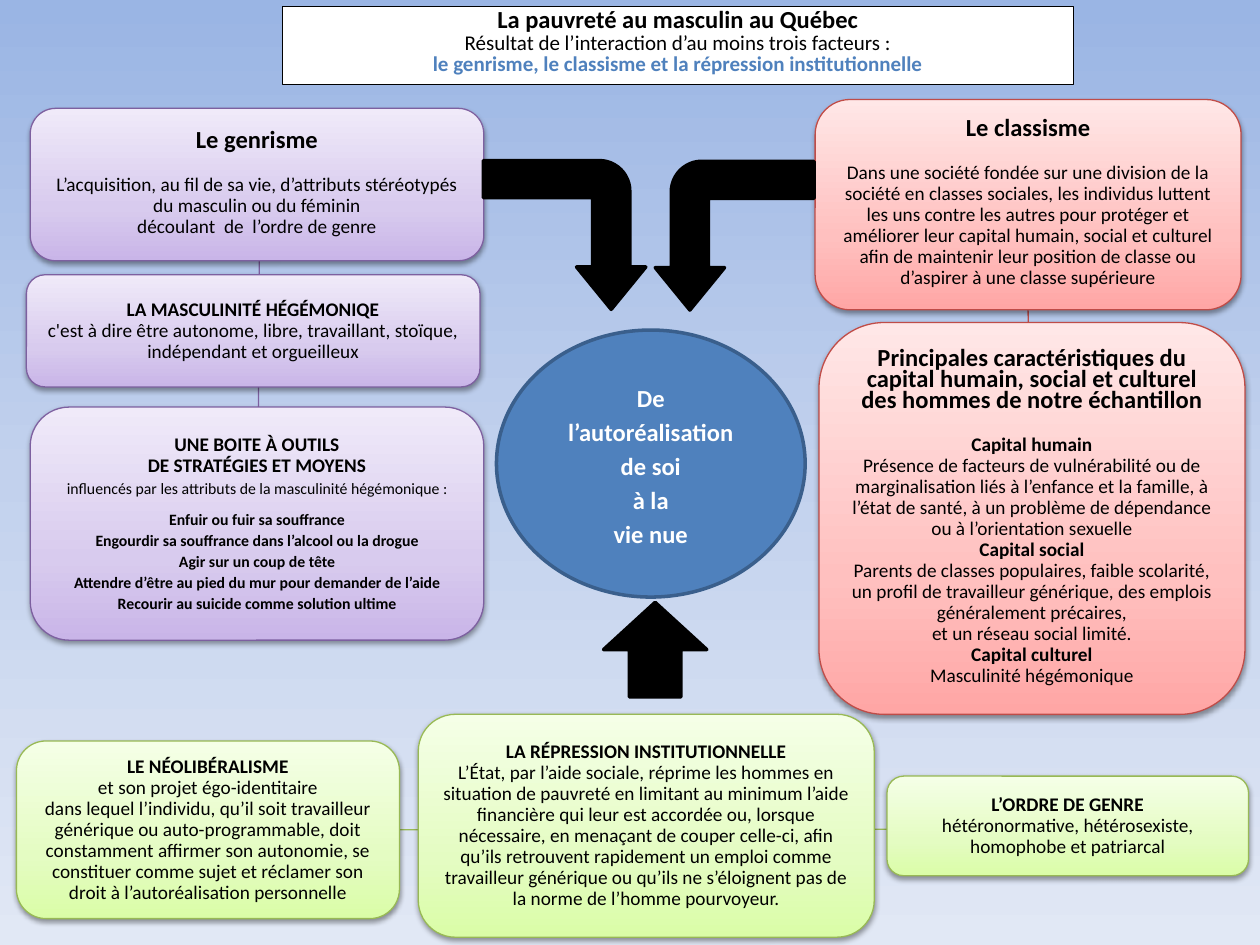
from lxml import etree
from pptx import Presentation
from pptx.dml.color import RGBColor
from pptx.enum.shapes import MSO_CONNECTOR, MSO_SHAPE
from pptx.enum.text import MSO_ANCHOR, PP_ALIGN
from pptx.oxml import parse_xml
from pptx.oxml.ns import nsdecls, qn
from pptx.util import Pt

RECT, ROUND, OVAL = MSO_SHAPE.RECTANGLE, MSO_SHAPE.ROUNDED_RECTANGLE, MSO_SHAPE.OVAL
UP, BENT = MSO_SHAPE.UP_ARROW, MSO_SHAPE.BENT_ARROW
STRAIGHT = MSO_CONNECTOR.STRAIGHT
CENTER, TOP, MIDDLE = PP_ALIGN.CENTER, MSO_ANCHOR.TOP, MSO_ANCHOR.MIDDLE

THEME = {
    "font": "Calibri", "black": "000000", "white": "FFFFFF",
    "blue": "4F81BD", "navy": "3A5F8C",
    "sky": [(0, "9AB5E4"), (50, "C2D1ED"), (100, "E1E8F5")],
    "violet": ("7D60A0", [(0, "C9B5E8"), (35, "D8CBEE"), (100, "F0EAF9")]),
    "red": ("BF4C48", [(0, "FFA6A5"), (35, "FFC0BF"), (100, "FFE7E7")]),
    "green": ("98B955", [(0, "DAFDA7"), (35, "E4FCC2"), (100, "F5FFE7")]),
    # style: size, bold
    "head": (14, True), "lead": (12, False), "key": (12, True),
    "bold": (11, True), "body": (11, False),
    "small": (9, False), "item": (9, True),
}

# Each paragraph: style, text, optional space before
TITLE = [
    ("head", "La pauvreté au masculin au Québec"),
    ("lead", "Résultat de l’interaction d’au moins trois facteurs :"),
    ("key", "le genrisme, le classisme et la répression institutionnelle"),
]
CORE = [("head", t) for t in ("De l’autoréalisation", "de soi", "à la", "vie nue")]

# name: colour, (left, top, width, height), paragraphs
BOXES = {
    "genre": ("violet", (17.3, 61.9, 259.2, 87.1), [
        ("head", "Le genrisme"),
        ("body", "L’acquisition, au fil de sa vie, d’attributs stéréotypés du masculin ou du féminin", 12),
        ("body", "découlant  de  l’ordre de genre"),
    ]),
    "norm": ("violet", (15.1, 157, 259.2, 64.1), [
        ("bold", "LA MASCULINITÉ HÉGÉMONIQE"),
        ("body", "c'est à dire être autonome, libre, travaillant, stoïque, indépendant et orgueilleux"),
    ]),
    "tools": ("violet", (17.3, 232.6, 259.2, 133.2), [
        ("bold", "UNE BOITE À OUTILS"),
        ("bold", "DE STRATÉGIES ET MOYENS"),
        ("small", "influencés par les attributs de la masculinité hégémonique :"),
        ("item", "Enfuir ou fuir sa souffrance", 6),
        ("item", "Engourdir sa souffrance dans l’alcool ou la drogue"),
        ("item", "Agir sur un coup de tête"),
        ("item", "Attendre d’être au pied du mur pour demander de l’aide"),
        ("item", "Recourir au suicide comme solution ultime"),
    ]),
    "class": ("red", (465.8, 56.9, 243.4, 120.2), [
        ("head", "Le classisme"),
        ("body", "Dans une société fondée sur une division de la société en classes sociales, "
                 "les individus luttent les uns contre les autres pour protéger et améliorer "
                 "leur capital humain, social et culturel", 12),
        ("body", "afin de maintenir leur position de classe ou d’aspirer à une classe supérieure"),
    ]),
    "capital": ("red", (468, 184.3, 243.4, 223.9), [
        ("head", "Principales caractéristiques du capital humain, social et culturel "
                 "des hommes de notre échantillon"),
        ("bold", "Capital humain", 12),
        ("body", "Présence de facteurs de vulnérabilité ou de marginalisation liés à l’enfance "
                 "et la famille, à l’état de santé, à un problème de dépendance ou à "
                 "l’orientation sexuelle"),
        ("bold", "Capital social"),
        ("body", "Parents de classes populaires, faible scolarité,"),
        ("body", "un profil de travailleur générique, des emplois généralement précaires,"),
        ("body", "et un réseau social limité."),
        ("bold", "Capital culturel"),
        ("body", "Masculinité hégémonique"),
    ]),
    "state": ("green", (239, 408.2, 260.6, 127.4), [
        ("bold", "LA RÉPRESSION INSTITUTIONNELLE"),
        ("body", "L’État, par l’aide sociale, réprime les hommes en situation de pauvreté en "
                 "limitant au minimum l’aide financière qui leur est accordée ou, lorsque "
                 "nécessaire, en menaçant de couper celle-ci, afin qu’ils retrouvent rapidement "
                 "un emploi comme travailleur générique ou qu’ils ne s’éloignent pas de la norme "
                 "de l’homme pourvoyeur."),
    ]),
    "market": ("green", (9.4, 423.4, 218.9, 101.5), [
        ("bold", "LE NÉOLIBÉRALISME"),
        ("body", "et son projet égo-identitaire"),
        ("body", "dans lequel l’individu, qu’il soit travailleur générique ou auto-programmable, "
                 "doit constamment affirmer son autonomie, se constituer comme sujet et réclamer "
                 "son droit à l’autoréalisation personnelle"),
    ]),
    "order": ("green", (506.9, 443.5, 206.6, 56.9), [
        ("bold", "L’ORDRE DE GENRE"),
        ("body", "hétéronormative, hétérosexiste, homophobe et patriarcal"),
    ]),
}

# colour, ends, joined start and joined end as (box, side)
LINKS = [
    ("violet", (148.3, 123.1, 146.9, 365.8), None, ("tools", 2)),
    ("red", (587.5, 178.6, 589.7, 408.2), ("class", 2), ("capital", 2)),
    ("green", (229, 473.8, 527.8, 473.8), ("market", 3), None),
]
# place, mirrored
BENDS = [((280.1, 87.8, 85, 92.9), False), ((377.3, 89.3, 85, 90.7), True)]


def rgb(code):
    return RGBColor.from_string(code)


def blend(fill, root, stops, angle):
    """Give a fill any number of gradient stops; root is the element that holds it."""
    fill.solid()
    marks = "".join(f'<a:gs pos="{pos * 1000}"><a:srgbClr val="{code}"/></a:gs>'
                    for pos, code in stops)
    grad = parse_xml(f'<a:gradFill {nsdecls("a")} rotWithShape="1"><a:gsLst>{marks}</a:gsLst>'
                     f'<a:lin ang="{angle * 60000}" scaled="0"/></a:gradFill>')
    old = next(root.iter(qn("a:solidFill")))
    old.getparent().replace(old, grad)


def shade(shape):
    """Add a soft shadow below the shape."""
    glow = parse_xml(f'<a:outerShdw {nsdecls("a")} blurRad="{Pt(3.1)}" dist="{Pt(1.6)}" '
                     'dir="5400000" rotWithShape="0"><a:srgbClr val="000000">'
                     '<a:alpha val="38000"/></a:srgbClr></a:outerShdw>')
    shape.element.spPr.find(qn("a:effectLst")).append(glow)


def draw(slide, kind, place, line, width, fill):
    """Add a shape; fill is one colour or a list of gradient stops."""
    shape = slide.shapes.add_shape(kind, *map(Pt, place))
    if isinstance(fill, str):
        shape.fill.solid()
        shape.fill.fore_color.rgb = rgb(fill)
    else:
        blend(shape.fill, shape.element.spPr, fill, 270)
    shape.line.color.rgb = rgb(line)
    shape.line.width = Pt(width)
    shape.shadow.inherit = False
    return shape


def write(shape, paras, color="black", space=Pt(12), anchor=MIDDLE):
    frame = shape.text_frame
    frame.word_wrap = True
    frame.vertical_anchor = anchor
    for i, (style, text, *gap) in enumerate(paras):
        para = frame.paragraphs[0] if i == 0 else frame.add_paragraph()
        para.alignment = CENTER
        para.line_spacing = space
        if gap:
            para.space_before = Pt(gap[0])
        run = para.add_run()
        run.text = text
        size, bold = THEME[style]
        run.font.name = THEME["font"]
        run.font.size = Pt(size)
        run.font.bold = bold
        run.font.color.rgb = rgb(THEME["blue" if style == "key" else color])


def main():
    deck = Presentation()
    deck.slide_width, deck.slide_height = Pt(720), Pt(540)
    slide = deck.slides.add_slide(deck.slide_layouts[6])
    blend(slide.background.fill, slide.element, THEME["sky"], 90)

    lines = []
    for hue, ends, *_ in LINKS:
        line = slide.shapes.add_connector(STRAIGHT, *map(Pt, ends))
        line.line.color.rgb = rgb(THEME[hue][0])
        line.line.width = Pt(0.75)
        etree.SubElement(line.element.spPr, qn("a:effectLst"))
        lines.append(line)

    black, white = THEME["black"], THEME["white"]
    title = draw(slide, RECT, (161.3, 3.6, 452.2, 44.6), black, 0.5, white)
    write(title, TITLE, anchor=TOP)
    core = draw(slide, OVAL, (283.7, 188.6, 176.4, 152.6), THEME["navy"], 2, THEME["blue"])
    write(core, CORE, color="white", space=1.15)

    boxes = {}
    for name, (hue, place, paras) in BOXES.items():
        edge, stops = THEME[hue]
        boxes[name] = draw(slide, ROUND, place, edge, 0.75, stops)
        shade(boxes[name])
        write(boxes[name], paras)
    for line, (_, _, start, end) in zip(lines, LINKS):
        if start:
            line.begin_connect(boxes[start[0]], start[1])
        if end:
            line.end_connect(boxes[end[0]], end[1])

    draw(slide, UP, (344.9, 344.2, 59, 54), black, 2, black)
    for place, mirror in BENDS:
        bend = draw(slide, BENT, place, black, 2, black)
        for i, value in enumerate((0.25, 0.233, 0.285, 0.205)):
            bend.adjustments[i] = value
        bend.rotation = 90
        if mirror:
            bend.element.spPr.xfrm.set("flipV", "1")
    deck.save("out.pptx")


if __name__ == "__main__":
    main()
